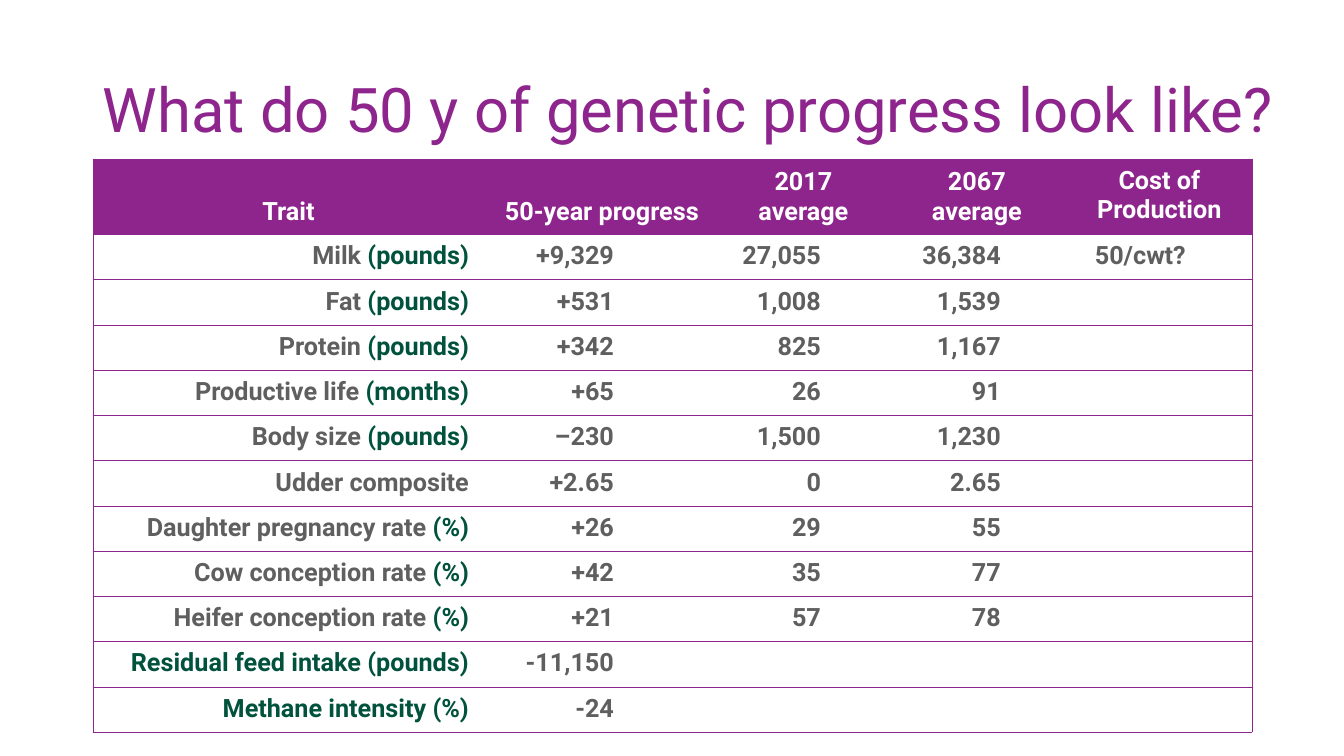
"""Slide with a table of fifty years of genetic progress in dairy traits."""
from lxml import etree
from pptx import Presentation
from pptx.dml.color import RGBColor
from pptx.enum.text import MSO_ANCHOR, PP_ALIGN
from pptx.oxml.ns import qn
from pptx.util import Pt

TOP, MIDDLE, BOTTOM = MSO_ANCHOR.TOP, MSO_ANCHOR.MIDDLE, MSO_ANCHOR.BOTTOM
CENTER, RIGHT = PP_ALIGN.CENTER, PP_ALIGN.RIGHT
PX = 914400 / 100.8
FONT = "Roboto"
COLORS = {"purple": "8E258D", "gray": "5F5F5F", "green": "00523C", "white": "FFFFFF"}

HEADERS = ["Trait", "50-year progress", "2017 average", "2067 average", "Cost of Production"]
TRAITS = [
    ("Milk ", "(pounds)", "+9,329", "27,055", "36,384", "50/cwt?"),
    ("Fat ", "(pounds)", "+531", "1,008", "1,539", ""),
    ("Protein ", "(pounds)", "+342", "825", "1,167", ""),
    ("Productive life ", "(months)", "+65", "26", "91", ""),
    ("Body size ", "(pounds)", "–230", "1,500", "1,230", ""),
    ("Udder composite", "", "+2.65", "0", "2.65", ""),
    ("Daughter pregnancy rate ", "(%)", "+26", "29", "55", ""),
    ("Cow conception rate ", "(%)", "+42", "35", "77", ""),
    ("Heifer conception rate ", "(%)", "+21", "57", "78", ""),
    ("", "Residual feed intake (pounds)", "-11,150", "", "", ""),
    ("", "Methane intensity (%)", "-24", "", "", ""),
]
COLUMN_WIDTHS = [391, 236, 167, 180, 185]
RIGHT_MARGINS = [15, 106, 66, 66, 66]
HEADER_HEIGHT, ROW_HEIGHT = 75, 44


def px(length):
    return round(length * PX)


def add_span(para, text, color, size, bold):
    span = para.add_run()
    span.text = text
    span.font.color.rgb = RGBColor.from_string(COLORS[color])
    for name, value in {"name": FONT, "size": Pt(size), "bold": bold}.items():
        setattr(span.font, name, value)


deck = Presentation()
deck.slide_width, deck.slide_height = px(1344), px(756)
page = deck.slides.add_slide(deck.slide_layouts[6])

title = page.shapes.add_textbox(px(93), px(40), px(1210), px(146)).text_frame
title.word_wrap = True
title.vertical_anchor = MIDDLE
title.paragraphs[0].line_spacing = 0.9
add_span(title.paragraphs[0], "What do 50 y of genetic progress look like?", "purple", 44, False)

row_count, column_count = len(TRAITS) + 1, len(HEADERS)
table = page.shapes.add_table(
    row_count, column_count, px(93), px(159), px(sum(COLUMN_WIDTHS)),
    px(HEADER_HEIGHT + ROW_HEIGHT * len(TRAITS))).table
table.first_row = True
table.horz_banding = False
for column, width in zip(table.columns, COLUMN_WIDTHS):
    column.width = px(width)
for index, row in enumerate(table.rows):
    row.height = px(ROW_HEIGHT if index else HEADER_HEIGHT)

rows = [[[(text, "white")] for text in HEADERS]]
for name, unit, *values in TRAITS:
    rows.append([[(name, "gray"), (unit, "green")]] + [[(value, "gray")] for value in values])

for row_index, row in enumerate(rows):
    for column_index, parts in enumerate(row):
        is_header = row_index == 0
        is_last = column_index == column_count - 1
        cell = table.cell(row_index, column_index)
        layout = {
            "margin_left": px(15),
            "margin_top": px(7),
            "margin_right": px(15 if is_header else RIGHT_MARGINS[column_index]),
            "margin_bottom": px(8),
            "vertical_anchor": BOTTOM if is_header and not is_last else TOP,
        }
        for name, value in layout.items():
            setattr(cell, name, value)

        borders = {"lnL": column_index == 0, "lnR": is_last, "lnT": True, "lnB": True}
        properties = cell._tc.get_or_add_tcPr()
        for side, visible in borders.items():
            line = etree.SubElement(properties, qn(f"a:{side}"), w=str(Pt(0.5)))
            if visible:
                fill = etree.SubElement(line, qn("a:solidFill"))
                etree.SubElement(fill, qn("a:srgbClr"), val=COLORS["purple"])
            else:
                etree.SubElement(line, qn("a:noFill"))

        if is_header:
            cell.fill.solid()
            cell.fill.fore_color.rgb = RGBColor.from_string(COLORS["purple"])
        else:
            cell.fill.background()

        para = cell.text_frame.paragraphs[0]
        para.alignment = CENTER if is_header else RIGHT
        for text, color in parts:
            if text:
                add_span(para, text, color, 18, True)

deck.save("out.pptx")
